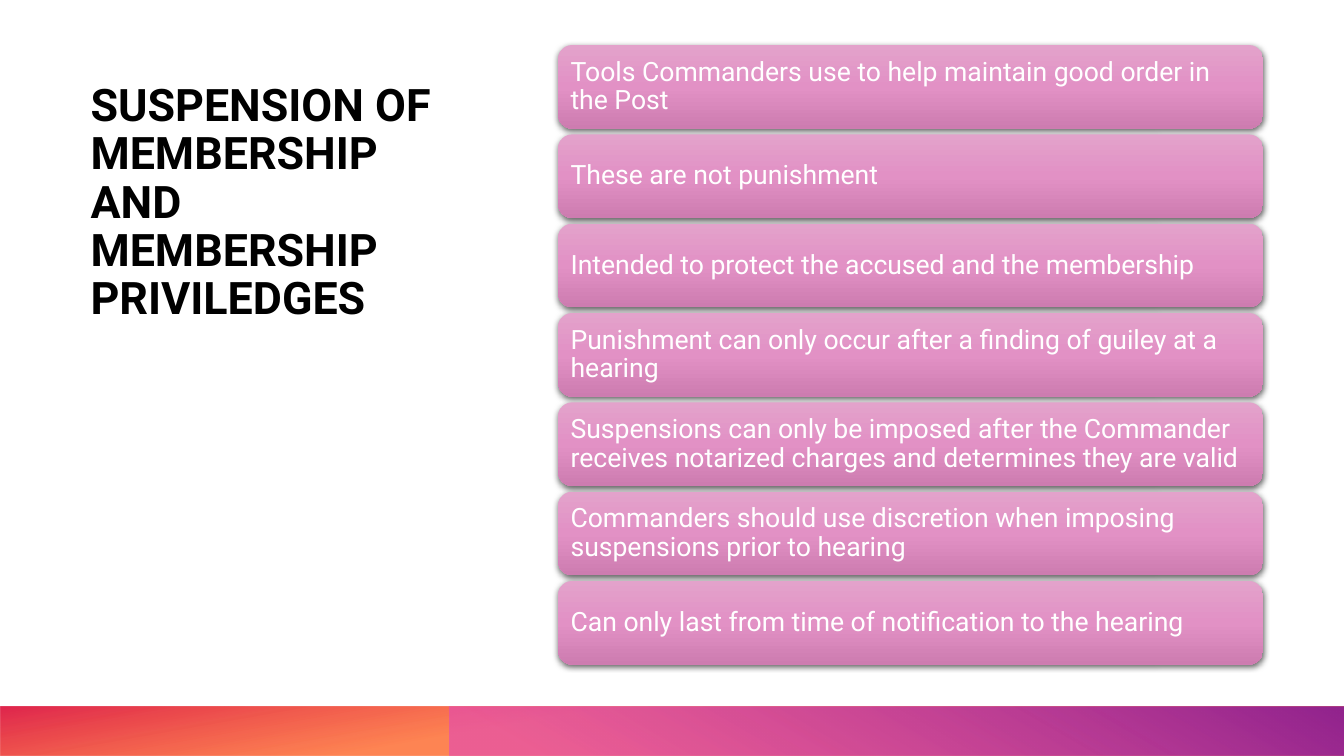
"""Build the slide on suspension of membership and privileges."""
from lxml.etree import SubElement
from pptx import Presentation
from pptx.dml.color import RGBColor
from pptx.enum.shapes import MSO_SHAPE
from pptx.enum.text import MSO_ANCHOR, PP_ALIGN
from pptx.oxml.ns import qn
from pptx.util import Pt

TITLE = "SUSPENSION OF MEMBERSHIP AND MEMBERSHIP PRIVILEDGES"
POINTS = [
    "Tools Commanders use to help maintain good order in the Post",
    "These are not punishment",
    "Intended to protect the accused and the membership",
    "Punishment can only occur after a finding of guiley at a hearing",
    "Suspensions can only be imposed after the Commander receives notarized charges and determines they are valid",
    "Commanders should use discretion when imposing suspensions prior to hearing",
    "Can only last from time of notification to the hearing",
]

THEME = {
    "font": "Roboto",
    "title": {"size": 32, "color": "000000", "bold": True},
    "point": {"size": 19, "color": "FFFFFF", "bold": False},
    "card": ([(0, "E3A2CB", 100), (50, "E291C5", 100), (100, "CD7CB0", 100)], 90),
    "warm": ([(62, "FE4A00", 67), (100, "DA002F", 85)], 100),
    "violet": ([(9, "E349BB", 62), (99, "92248E", 100)], 240),
    "shadow": {"color": "000000", "opacity": 63, "blur": 4.5, "distance": 1.5, "angle": 90},
}
WIDTH, HEIGHT = 960, 540
BAND_TOP, BAND_SPLIT = 504.6, 321.1
TITLE_BOX = (57.6, 55.4, 279.4, 391)
CARD_LEFT, CARD_TOP, CARD_WIDTH, CARD_HEIGHT = 398.7, 32.2, 503.5, 59.7
CARD_PITCH = 63.8


def add_color(parent, color, opacity):
    node = SubElement(parent, qn("a:srgbClr"), val=color)
    if opacity < 100:
        SubElement(node, qn("a:alpha"), val=str(opacity * 1000))


def add_panel(slide, kind, box, gradient):
    shape = slide.shapes.add_shape(kind, *map(Pt, box))
    shape.shadow.inherit = False
    shape.line.fill.background()
    shape.fill.background()
    properties = shape._element.spPr
    stops, angle = gradient
    fill = SubElement(properties, qn("a:gradFill"), rotWithShape="1")
    stop_list = SubElement(fill, qn("a:gsLst"))
    for position, color, opacity in stops:
        stop = SubElement(stop_list, qn("a:gs"), pos=str(position * 1000))
        add_color(stop, color, opacity)
    SubElement(fill, qn("a:lin"), ang=str(angle * 60000), scaled="0")
    properties.replace(properties.find(qn("a:noFill")), fill)
    return shape


def add_band(slide, left, gradient, rotation):
    box = (left, BAND_TOP, WIDTH - left, HEIGHT - BAND_TOP)
    shape = add_panel(slide, MSO_SHAPE.RECTANGLE, box, gradient)
    shape.rotation = rotation
    shape._element.spPr.find(qn("a:xfrm")).set("flipH", "1")


def add_shadow(shape, style):
    effects = shape._element.spPr.find(qn("a:effectLst"))
    shadow = SubElement(
        effects, qn("a:outerShdw"),
        blurRad=str(Pt(style["blur"])), dist=str(Pt(style["distance"])),
        dir=str(style["angle"] * 60000), rotWithShape="0",
    )
    add_color(shadow, style["color"], style["opacity"])


def write_text(shape, text, style, frame_format):
    frame = shape.text_frame
    for name, value in {"word_wrap": True, **frame_format}.items():
        setattr(frame, name, value)
    paragraph = frame.paragraphs[0]
    paragraph.alignment = PP_ALIGN.LEFT
    paragraph.line_spacing = 0.9
    run = paragraph.add_run()
    run.text = text
    font_format = {"name": THEME["font"], "size": Pt(style["size"]), "bold": style["bold"]}
    for name, value in font_format.items():
        setattr(run.font, name, value)
    run.font.color.rgb = RGBColor.from_string(style["color"])


def main():
    presentation = Presentation()
    presentation.slide_width, presentation.slide_height = Pt(WIDTH), Pt(HEIGHT)
    slide = presentation.slides.add_slide(presentation.slide_layouts[6])

    add_band(slide, 0, THEME["warm"], 180)
    add_band(slide, BAND_SPLIT, THEME["violet"], 0)

    title = slide.shapes.add_textbox(*map(Pt, TITLE_BOX))
    write_text(title, TITLE, THEME["title"], {"vertical_anchor": MSO_ANCHOR.TOP})

    margins = {f"margin_{side}": Pt(6) for side in ("left", "top", "right", "bottom")}
    card_format = {"vertical_anchor": MSO_ANCHOR.MIDDLE, **margins}
    for index, point in enumerate(POINTS):
        box = (CARD_LEFT, CARD_TOP + index * CARD_PITCH, CARD_WIDTH, CARD_HEIGHT)
        card = add_panel(slide, MSO_SHAPE.ROUNDED_RECTANGLE, box, THEME["card"])
        add_shadow(card, THEME["shadow"])
        write_text(card, point, THEME["point"], card_format)

    presentation.save("out.pptx")


if __name__ == "__main__":
    main()
